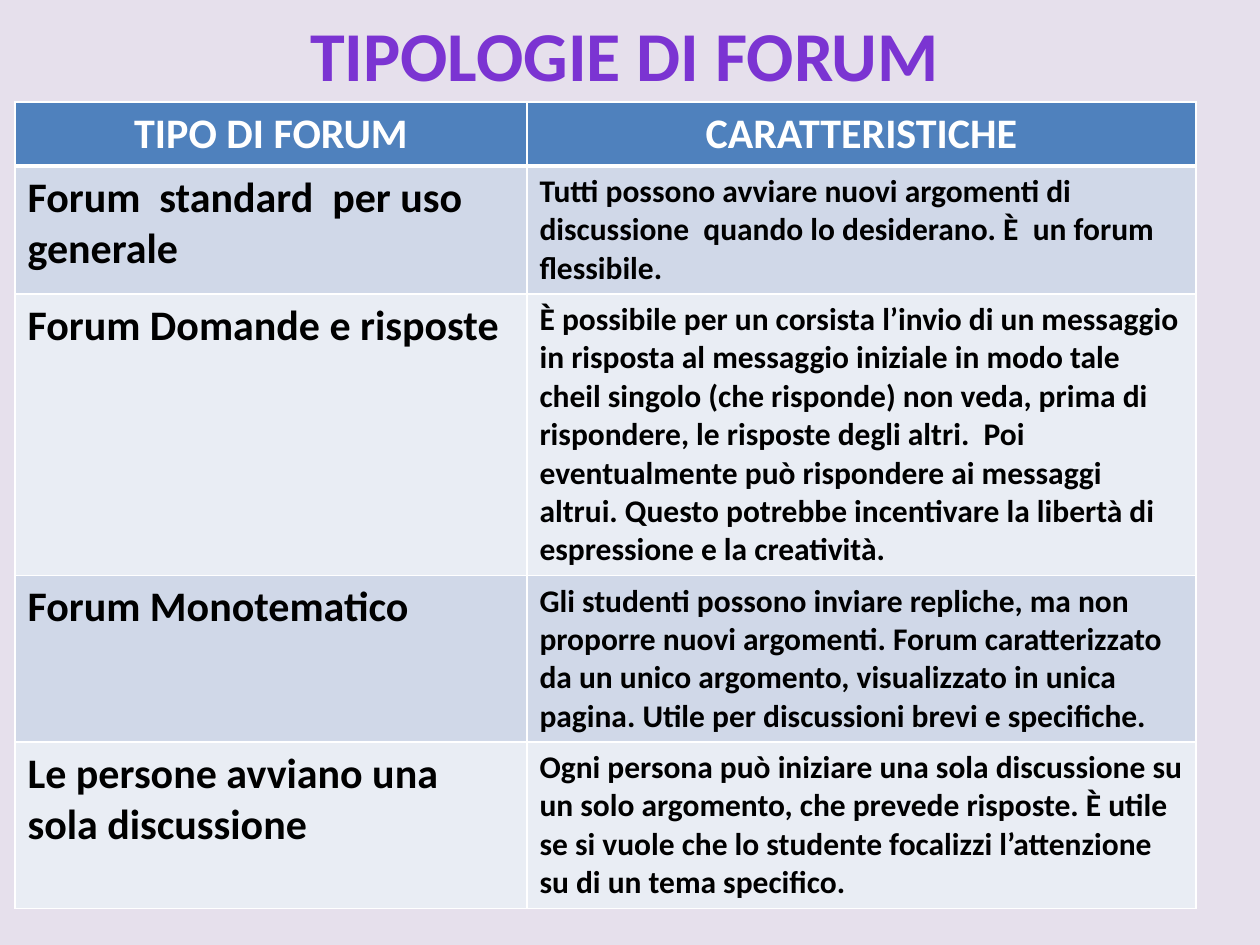
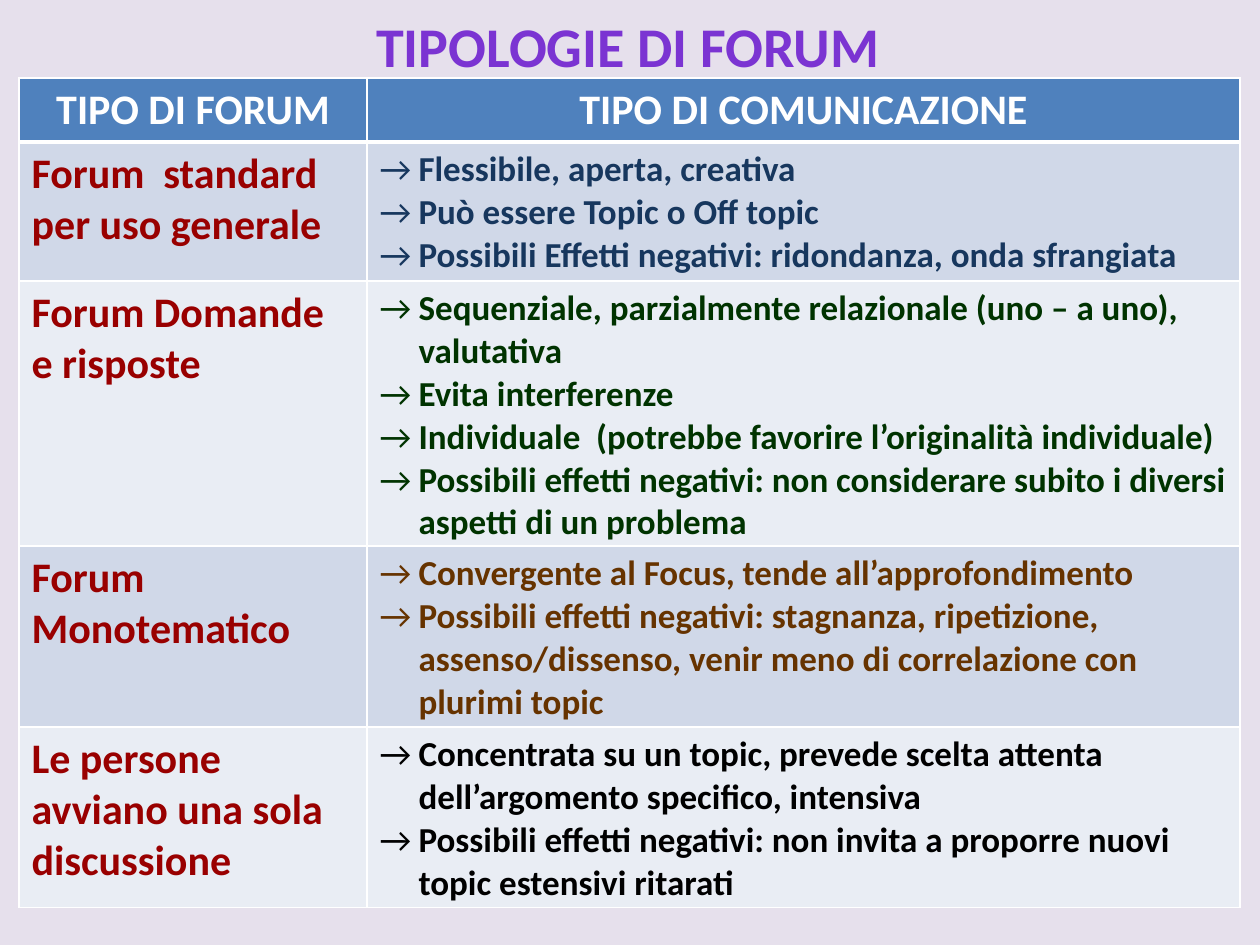
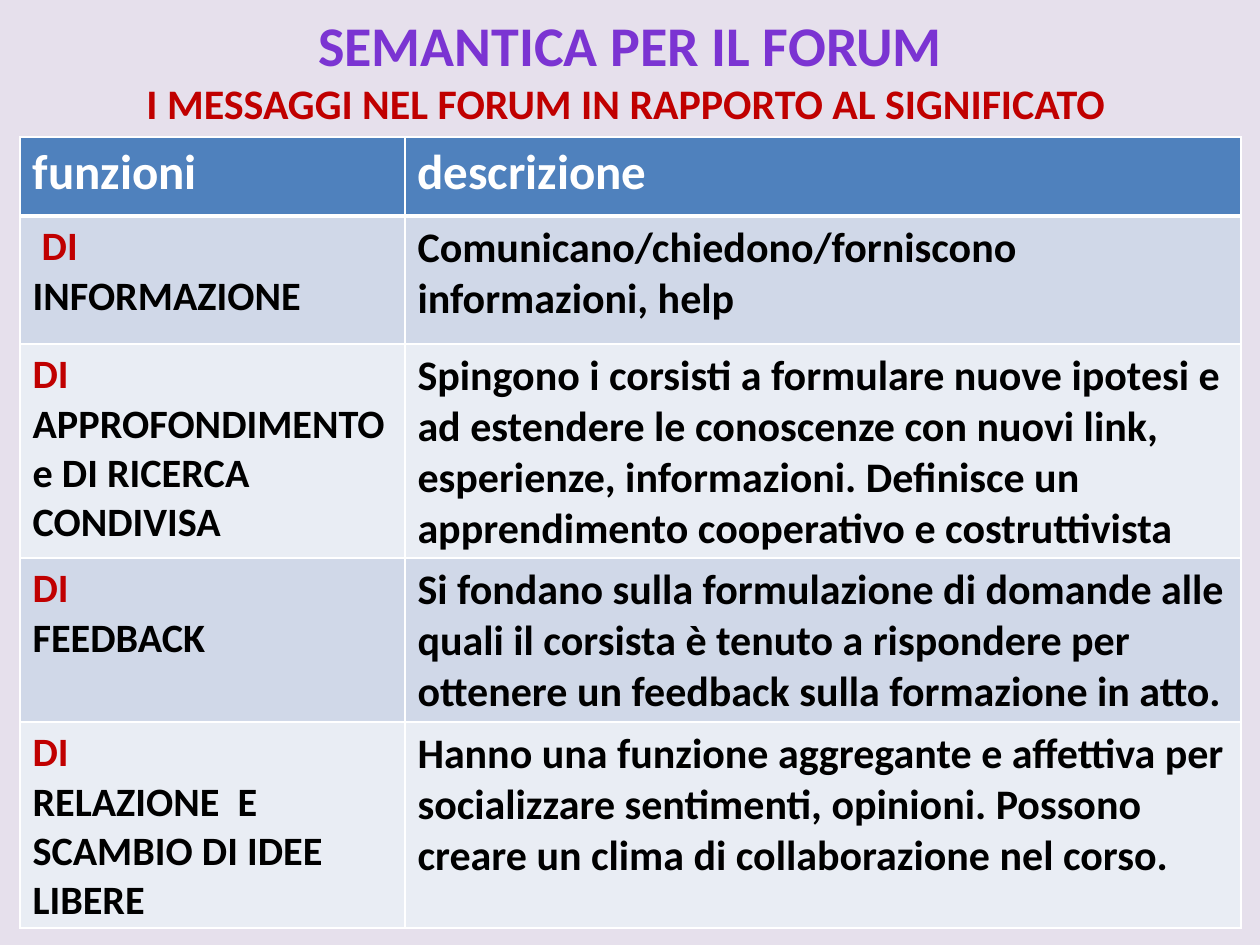
from lxml import etree
from pptx import Presentation
from pptx.dml.color import RGBColor
from pptx.enum.text import MSO_AUTO_SIZE, PP_ALIGN
from pptx.oxml.ns import qn
from pptx.util import Pt

PX = 914400 // 126
CENTER, LEFT = PP_ALIGN.CENTER, PP_ALIGN.LEFT
FIT_SHAPE = MSO_AUTO_SIZE.SHAPE_TO_FIT_TEXT
FONT = "Calibri"

BACKGROUND = RGBColor(0xE6, 0xE0, 0xEC)
PURPLE = RGBColor(0x7B, 0x34, 0xD2)
HEADER_FILL = RGBColor(0x4F, 0x81, 0xBD)
BAND_FILLS = RGBColor(0xD0, 0xD8, 0xE8), RGBColor(0xE9, 0xED, 0xF4)
WHITE = RGBColor(0xFF, 0xFF, 0xFF)
BLACK = RGBColor(0, 0, 0)
RED = RGBColor(0xC0, 0, 0)
DARK_RED = RGBColor(0x99, 0, 0)
NAVY = RGBColor(0x17, 0x37, 0x5E)
GREEN = RGBColor(0, 0x33, 0)
BROWN = RGBColor(0x66, 0x33, 0)

# Content: a paragraph is a list of (text, colour) runs
FORUM_TYPES = [
    "Forum  standard  per uso generale",
    "Forum Domande e risposte",
    "Forum Monotematico",
    "Le persone avviano una sola discussione",
]
FEATURES = [
    "Tutti possono avviare nuovi argomenti di discussione  quando lo desiderano. "
    "È  un forum flessibile.",
    "È possibile per un corsista l’invio di un messaggio in risposta al messaggio "
    "iniziale in modo tale cheil singolo (che risponde) non veda, prima di rispondere, "
    "le risposte degli altri.  Poi eventualmente può rispondere ai messaggi altrui. "
    "Questo potrebbe incentivare la libertà di espressione e la creatività.",
    "Gli studenti possono inviare repliche, ma non proporre nuovi argomenti. Forum "
    "caratterizzato da un unico argomento, visualizzato in unica pagina. Utile per "
    "discussioni brevi e specifiche.",
    "Ogni persona può iniziare una sola discussione su un solo argomento, che prevede "
    "risposte. È utile se si vuole che lo studente focalizzi l’attenzione su di un "
    "tema specifico.",
]
COMMUNICATION = [
    (NAVY, ["Flessibile, aperta, creativa",
            "Può essere Topic o Off topic",
            "Possibili Effetti negativi: ridondanza, onda sfrangiata"]),
    (GREEN, ["Sequenziale, parzialmente relazionale (uno – a uno), valutativa",
             "Evita interferenze",
             "Individuale  (potrebbe favorire l’originalità individuale)",
             "Possibili effetti negativi: non considerare subito i diversi aspetti "
             "di un problema"]),
    (BROWN, ["Convergente al Focus, tende all’approfondimento",
             "Possibili effetti negativi: stagnanza, ripetizione, assenso/dissenso, "
             "venir meno di correlazione con plurimi topic"]),
    (BLACK, ["Concentrata su un topic, prevede scelta attenta dell’argomento "
             "specifico, intensiva",
             "Possibili effetti negativi: non invita a proporre nuovi topic estensivi "
             "ritarati"]),
]
FUNCTIONS = [
    [[(" DI", RED)], [("INFORMAZIONE", BLACK)]],
    [[("DI ", RED), ("APPROFONDIMENTO e DI RICERCA CONDIVISA", BLACK)]],
    [[("DI", RED)], [("FEEDBACK", BLACK)]],
    [[("DI", RED)], [("RELAZIONE  E SCAMBIO DI IDEE LIBERE", BLACK)]],
]
DESCRIPTIONS = [
    "Comunicano/chiedono/forniscono informazioni, help",
    "Spingono i corsisti a formulare nuove ipotesi e ad estendere le conoscenze con "
    "nuovi link, esperienze, informazioni. Definisce un apprendimento cooperativo e "
    "costruttivista",
    "Si fondano sulla formulazione di domande alle quali il corsista è tenuto a "
    "rispondere per ottenere un feedback sulla formazione in atto.",
    "Hanno una funzione aggregante e affettiva per socializzare sentimenti, opinioni. "
    "Possono creare un clima di collaborazione nel corso.",
]


def plain(texts, color=BLACK):
    """One single-run paragraph per cell."""
    return [[[(text, color)]] for text in texts]


SLIDES = [
    dict(titles=[("TIPOLOGIE DI FORUM", 40, PURPLE)], title_box=(294, 5, 661, 97),
         origin=(15, 102), widths=(512, 669), heights=(64, 126, 277, 164, 164),
         headers=("TIPO DI FORUM", "CARATTERISTICHE"), header_size=24,
         header_align=CENTER, sizes=(24, 18), arrows=False,
         columns=(plain(FORUM_TYPES), plain(FEATURES))),
    dict(titles=[("TIPOLOGIE DI FORUM", 32, PURPLE)], title_box=(361, 5, 534, 81),
         origin=(19, 78), widths=(348, 873), heights=(64, 139, 265, 181, 180),
         headers=("TIPO DI FORUM", "TIPO DI COMUNICAZIONE"), header_size=24,
         header_align=CENTER, sizes=(24, 20), arrows=True,
         columns=(plain(FORUM_TYPES, DARK_RED),
                  [[[(item, color)] for item in items]
                   for color, items in COMMUNICATION])),
    dict(titles=[("SEMANTICA PER IL FORUM", 32, PURPLE),
                 ("I MESSAGGI NEL FORUM IN RAPPORTO AL SIGNIFICATO ", 24, RED)],
         title_box=(134, 4, 993, 131),
         origin=(20, 137), widths=(385, 836), heights=(79, 128, 214, 163, 206),
         headers=("funzioni", "descrizione"), header_size=28,
         header_align=LEFT, sizes=(23, 24), arrows=False,
         columns=(FUNCTIONS, plain(DESCRIPTIONS))),
]


def add_arrow_bullet(paragraph):
    properties = paragraph._p.get_or_add_pPr()
    properties.set("marL", str(39 * PX))
    properties.set("indent", str(-39 * PX))
    etree.SubElement(properties, qn("a:buFont"), typeface="Calibri")
    etree.SubElement(properties, qn("a:buChar"), char="→")


def write(frame, paragraphs, size, align=LEFT, arrows=False):
    for i, runs in enumerate(paragraphs):
        paragraph = frame.paragraphs[0] if i == 0 else frame.add_paragraph()
        paragraph.alignment = align
        if arrows:
            add_arrow_bullet(paragraph)
        font = paragraph.font
        font.name, font.size, font.bold = FONT, Pt(size), True
        font.color.rgb = runs[0][1]
        for text, color in runs:
            run = paragraph.add_run()
            run.text = text
            if color != runs[0][1]:
                run.font.color.rgb = color


def set_borders(cell, top, bottom):
    properties = cell._tc.get_or_add_tcPr()
    edges = (("L", 1), ("R", 1), ("T", top), ("B", bottom))
    for i, (side, points) in enumerate(edges):
        line = etree.Element(qn(f"a:ln{side}"), w=str(Pt(points)))
        fill = etree.SubElement(line, qn("a:solidFill"))
        etree.SubElement(fill, qn("a:srgbClr"), val=str(WHITE))
        properties.insert(i, line)


def add_title(slide, content):
    box = slide.shapes.add_textbox(*(v * PX for v in content["title_box"]))
    frame = box.text_frame
    frame.word_wrap = False
    frame.auto_size = FIT_SHAPE
    for i, (text, size, color) in enumerate(content["titles"]):
        paragraph = frame.paragraphs[0] if i == 0 else frame.add_paragraph()
        paragraph.text, paragraph.alignment = text, CENTER
        font = paragraph.font
        font.name, font.size, font.bold = FONT, Pt(size), True
        font.color.rgb = color


def add_forum_table(slide, content):
    widths, heights = content["widths"], content["heights"]
    area = (*content["origin"], sum(widths), sum(heights))
    table = slide.shapes.add_table(len(heights), len(widths),
                                   *(v * PX for v in area)).table
    for row, height in zip(table.rows, heights):
        row.height = height * PX
    for c, width in enumerate(widths):
        table.columns[c].width = width * PX
        for r in range(len(heights)):
            cell = table.cell(r, c)
            cell.fill.solid()
            if r == 0:
                cell.fill.fore_color.rgb = HEADER_FILL
                write(cell.text_frame, [[(content["headers"][c], WHITE)]],
                      content["header_size"], content["header_align"])
            else:
                cell.fill.fore_color.rgb = BAND_FILLS[(r - 1) % 2]
                write(cell.text_frame, content["columns"][c][r - 1],
                      content["sizes"][c], arrows=content["arrows"] and c == 1)
            set_borders(cell, top=3 if r == 1 else 1, bottom=3 if r == 0 else 1)


def main():
    deck = Presentation()
    deck.slide_width, deck.slide_height = 1260 * PX, 945 * PX
    for content in SLIDES:
        slide = deck.slides.add_slide(deck.slide_layouts[6])
        slide.background.fill.solid()
        slide.background.fill.fore_color.rgb = BACKGROUND
        add_forum_table(slide, content)
        add_title(slide, content)
    deck.save("out.pptx")


if __name__ == "__main__":
    main()
